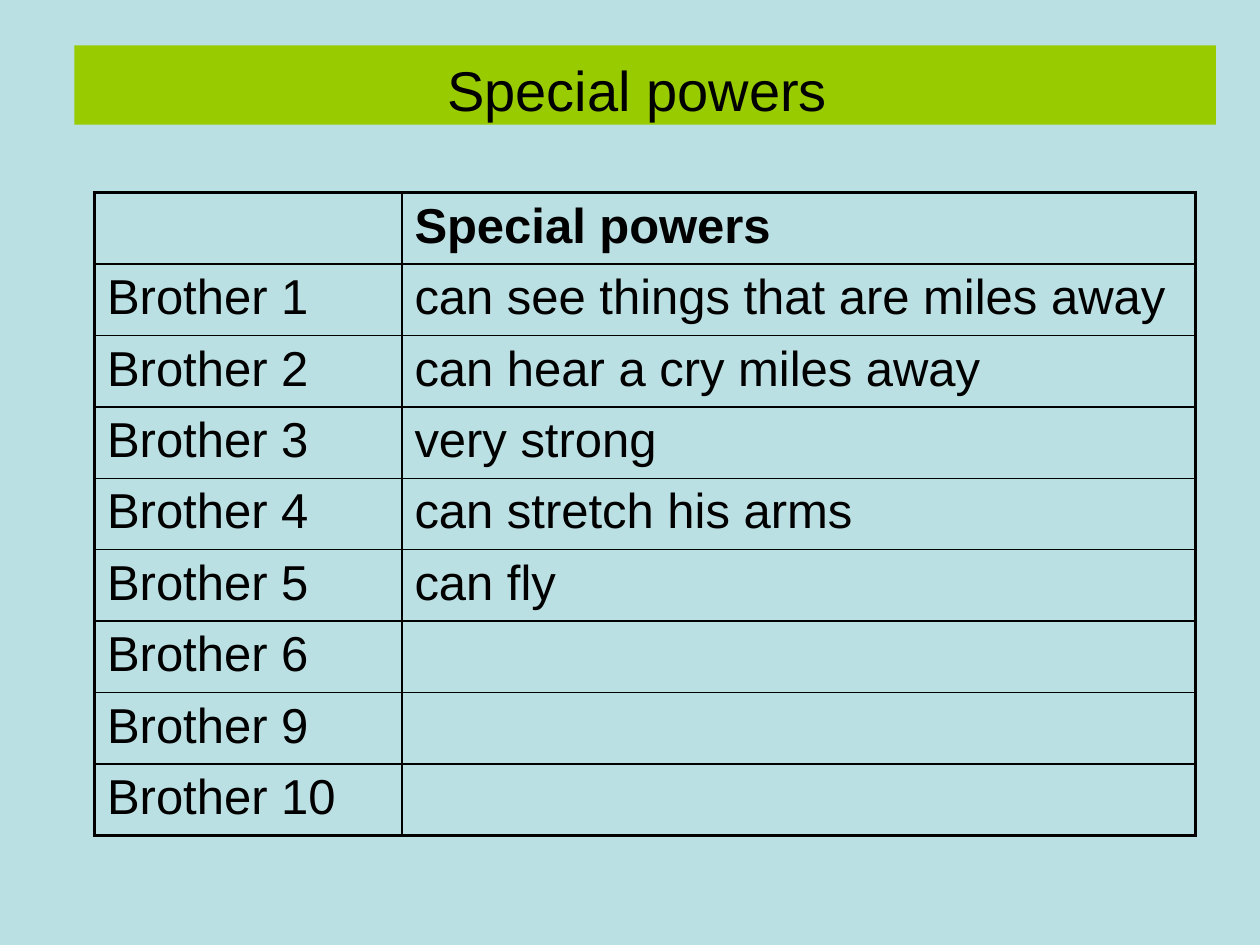
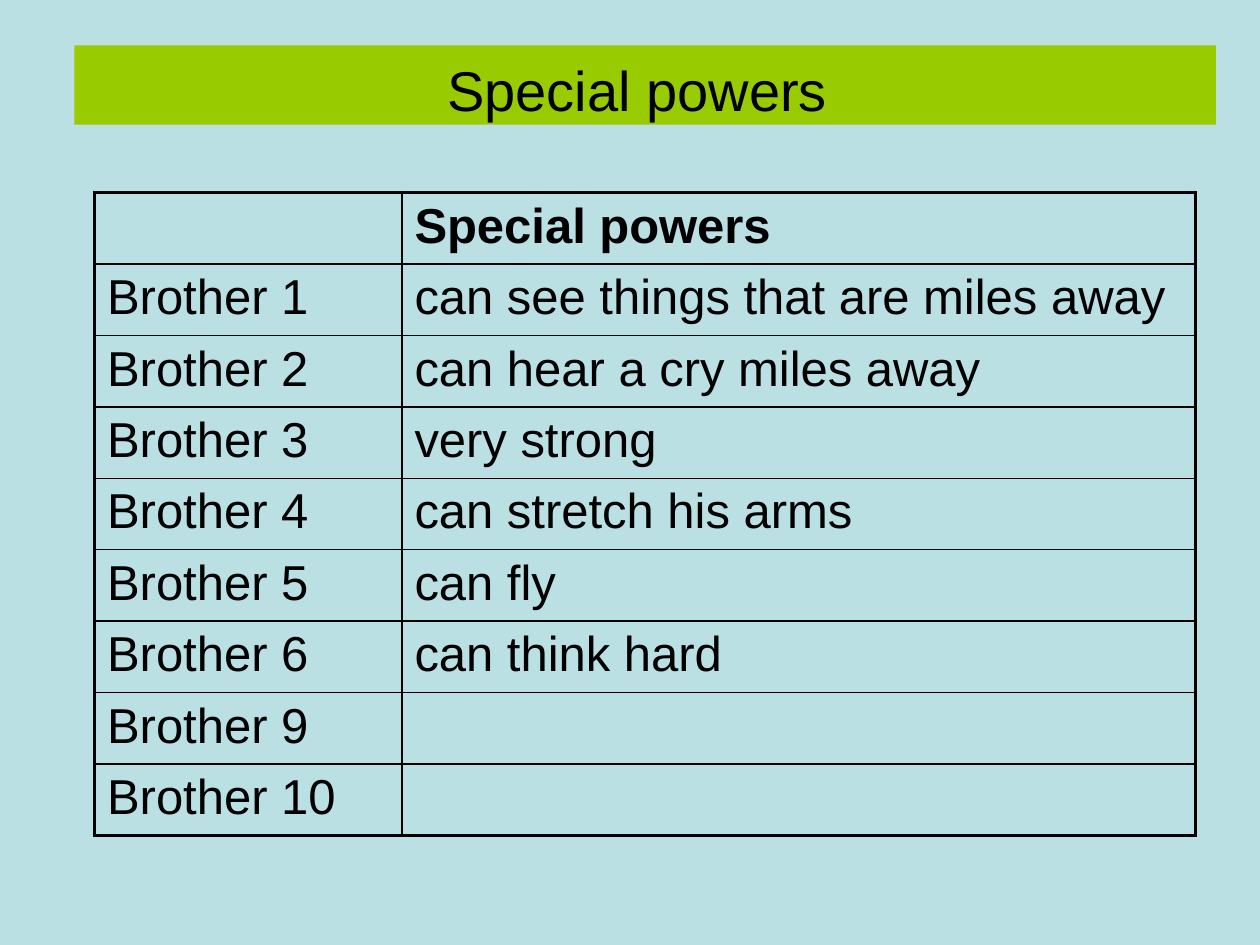
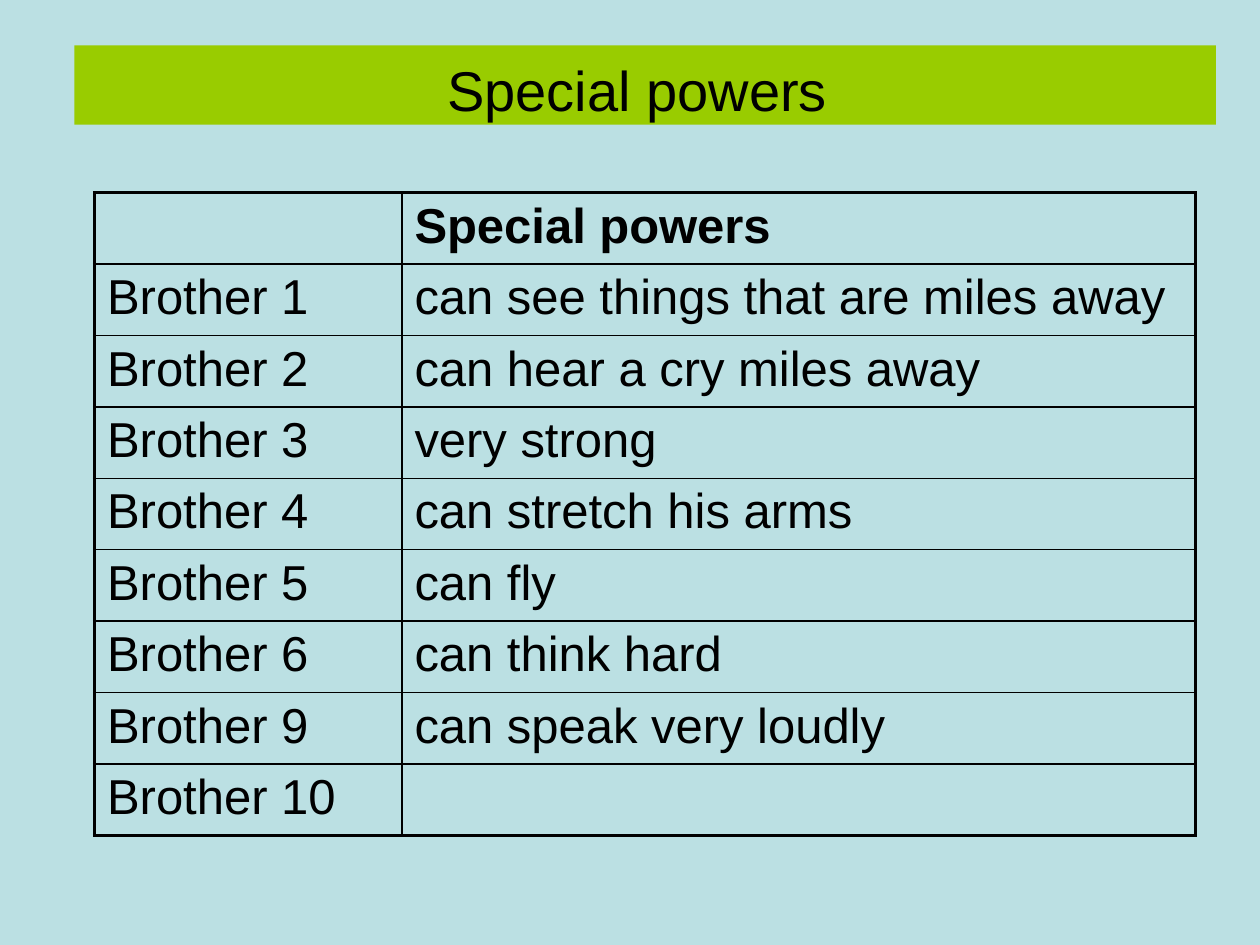
import dataclasses

import pptx
import pptx.dml.color
import pptx.enum.text
import pptx.oxml.ns
import pptx.util
from lxml import etree

TITLE = "Special powers "
HEADER = ("", "Special powers")
BROTHERS = [
    ("Brother 1", "can see things that are miles away"),
    ("Brother 2", "can hear a cry miles away"),
    ("Brother 3", "very strong"),
    ("Brother 4", "can stretch his arms"),
    ("Brother 5", "can fly"),
    ("Brother 6", "can think hard"),
    ("Brother 9", "can speak very loudly"),
    ("Brother 10", ""),
]
POWERS_SHOWN = (5, 6, 7)  # one slide for each count

TITLE_BOX = (0.59, 0.36, 9.06, 0.63)
TABLE_BOX = (0.75, 1.53, 8.74, 5.1)
NAME_WIDTH = 2.44


@dataclasses.dataclass(frozen=True)
class Theme:
    font: str = "Arial"
    background: str = "BBE0E3"
    band: str = "99CC00"
    ink: str = "000000"
    title_size: int = 32
    table_size: int = 28
    outer_line: float = 2.25
    inner_line: float = 1


THEME = Theme()


def rgb(color):
    return pptx.dml.color.RGBColor.from_string(color)


def inches(values):
    return [pptx.util.Inches(v) for v in values]


def add_run(p, text, size, bold=False):
    r = p.add_run()
    r.text = text
    r.font.name = THEME.font
    r.font.size = pptx.util.Pt(size)
    r.font.bold = bold
    r.font.color.rgb = rgb(THEME.ink)


def sub(parent, tag, **attributes):
    return etree.SubElement(parent, pptx.oxml.ns.qn(tag), **attributes)


def add_border(cell, side, width):
    ln = sub(cell._tc.get_or_add_tcPr(), f"a:ln{side}", w=str(pptx.util.Pt(width)))
    sub(sub(ln, "a:solidFill"), "a:srgbClr", val=THEME.ink)


def space_before(p, percent):
    """Set paragraph spacing as a share of the line height."""
    spacing = sub(p._p.get_or_add_pPr(), "a:spcBef")
    sub(spacing, "a:spcPct", val=str(percent * 1000))


def add_title(slide):
    sp = slide.shapes.title
    sp.left, sp.top, sp.width, sp.height = inches(TITLE_BOX)
    sp.fill.solid()
    sp.fill.fore_color.rgb = rgb(THEME.band)
    tf = sp.text_frame
    tf.auto_size = pptx.enum.text.MSO_AUTO_SIZE.NONE
    tf.vertical_anchor = pptx.enum.text.MSO_ANCHOR.MIDDLE
    tf.margin_top, tf.margin_bottom = inches((0.08, 0.02))
    p = tf.paragraphs[0]
    p.alignment = pptx.enum.text.PP_ALIGN.CENTER
    add_run(p, TITLE, THEME.title_size)


def add_powers_table(slide, shown):
    rows = [HEADER] + [
        (name, power if i < shown else "")
        for i, (name, power) in enumerate(BROTHERS)
    ]
    last_row, last_col = len(rows) - 1, len(HEADER) - 1
    table = slide.shapes.add_table(len(rows), len(HEADER), *inches(TABLE_BOX)).table
    table.first_row = table.horz_banding = False
    widths = inches((NAME_WIDTH, TABLE_BOX[2] - NAME_WIDTH))
    for column, width in zip(table.columns, widths):
        column.width = width
    for i, row in enumerate(rows):
        for j, text in enumerate(row):
            cell = table.cell(i, j)
            outer = {"L": j == 0, "R": j == last_col, "T": i == 0, "B": i == last_row}
            for side, is_outer in outer.items():
                add_border(cell, side, THEME.outer_line if is_outer else THEME.inner_line)
            cell.fill.background()
            if text:
                p = cell.text_frame.paragraphs[0]
                space_before(p, 20)
                add_run(p, text, THEME.table_size, bold=i == 0)


def main():
    prs = pptx.Presentation()
    prs.slide_width, prs.slide_height = inches((10, 7.5))
    fill = prs.slide_master.background.fill
    fill.solid()
    fill.fore_color.rgb = rgb(THEME.background)
    title_only = prs.slide_layouts.get_by_name("Title Only")
    for shown in POWERS_SHOWN:
        slide = prs.slides.add_slide(title_only)
        add_title(slide)
        add_powers_table(slide, shown)
    prs.save("out.pptx")


if __name__ == "__main__":
    main()
